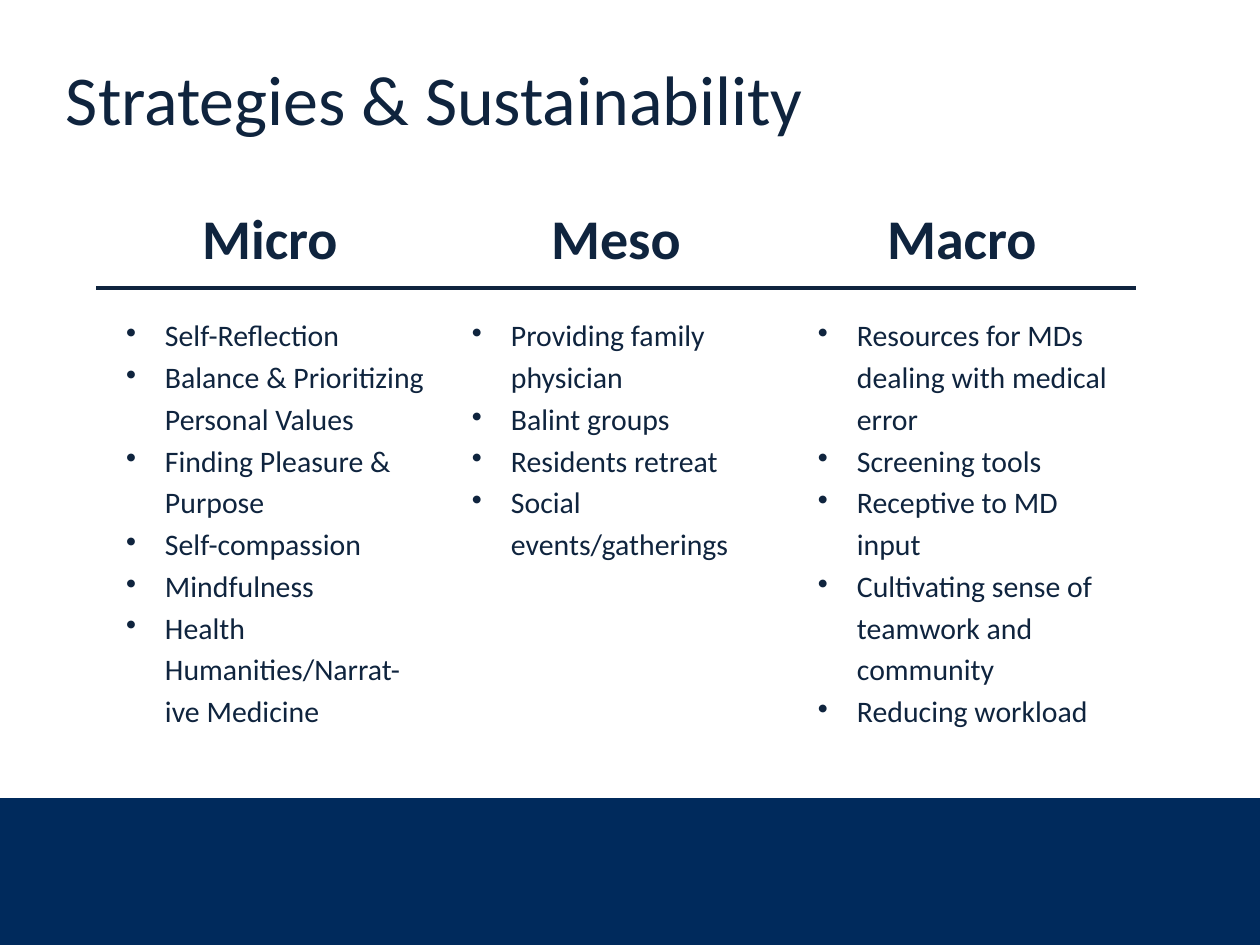
from lxml import etree
from pptx import Presentation
from pptx.dml.color import RGBColor
from pptx.enum.shapes import MSO_SHAPE
from pptx.enum.text import MSO_ANCHOR, PP_ALIGN
from pptx.oxml.ns import qn
from pptx.util import Pt

RECT = MSO_SHAPE.RECTANGLE
TOP, BOTTOM = MSO_ANCHOR.TOP, MSO_ANCHOR.BOTTOM
LEFT, CENTER = PP_ALIGN.LEFT, PP_ALIGN.CENTER

TITLE = "Strategies & Sustainability"
LEVELS = {
    "Micro": [
        "Self-Reflection",
        "Balance & Prioritizing Personal Values",
        "Finding Pleasure & Purpose",
        "Self-compassion",
        "Mindfulness",
        "Health Humanities/Narrat-ive Medicine",
    ],
    "Meso": [
        "Providing family physician",
        "Balint groups",
        "Residents retreat",
        "Social events/gatherings",
    ],
    "Macro": [
        "Resources for MDs dealing with medical error",
        "Screening tools",
        "Receptive to MD input",
        "Cultivating sense of teamwork and community",
        "Reducing workload",
    ],
}
COLORS = {"ink": "0F243E", "band": "002A5C"}
FONT = "Calibri"
WIDE, HIGH, BAND = 1260, 945, 798
COL, ROWS, PAD = 346, (115, 462), 13


def px(n):
    return round(n * 914400 / 126)


def add_bullet(para):
    props = para._p.get_or_add_pPr()
    props.set("marL", str(px(55)))
    props.set("indent", str(px(-39)))
    tint = etree.SubElement(props, qn("a:buClr"))
    etree.SubElement(tint, qn("a:srgbClr"), val=COLORS["ink"])
    etree.SubElement(props, qn("a:buChar"), char="•")


def write(frame, lines, size, bold=False, align=LEFT, bullet=False):
    for i, line in enumerate(lines):
        para = frame.add_paragraph() if i else frame.paragraphs[0]
        if bullet:
            add_bullet(para)
            para.line_spacing = 1.15
        para.alignment = align
        run = para.add_run()
        run.text = line
        run.font.name = FONT
        run.font.size = Pt(size)
        run.font.bold = bold
        run.font.color.rgb = RGBColor.from_string(COLORS["ink"])


def set_pad(box, top=PAD):
    box.margin_left = box.margin_right = box.margin_bottom = px(PAD)
    box.margin_top = px(top)


def add_rule(cell, side):
    line = etree.Element(qn("a:" + side), w=str(Pt(3)))
    fill = etree.SubElement(line, qn("a:solidFill"))
    etree.SubElement(fill, qn("a:srgbClr"), val=COLORS["ink"])
    cell._tc.get_or_add_tcPr().insert(0, line)


def fill_cell(cell, lines, size, side, anchor, top=PAD, **style):
    cell.fill.background()
    cell.vertical_anchor = anchor
    set_pad(cell, top)
    add_rule(cell, side)
    write(cell.text_frame, lines, size, **style)


def main():
    deck = Presentation()
    deck.slide_width, deck.slide_height = px(WIDE), px(HIGH)
    slide = deck.slides.add_slide(deck.slide_layouts[6])
    shapes = slide.shapes

    band = shapes.add_shape(RECT, 0, px(BAND), px(WIDE), px(HIGH - BAND))
    band.shadow.inherit = False
    band.fill.solid()
    band.fill.fore_color.rgb = RGBColor.from_string(COLORS["band"])
    band.line.fill.background()

    title = shapes.add_textbox(px(53), px(71), px(1153), px(81)).text_frame
    title.word_wrap = True
    title.vertical_anchor = BOTTOM
    set_pad(title)
    write(title, [TITLE], 40)

    table = shapes.add_table(len(ROWS), len(LEVELS), px(97), px(173),
                             px(COL * len(LEVELS)), px(sum(ROWS))).table
    table.first_row = table.horz_banding = False
    for row, tall in zip(table.rows, ROWS):
        row.height = px(tall)
    for i, (name, items) in enumerate(LEVELS.items()):
        table.columns[i].width = px(COL)
        fill_cell(table.cell(0, i), [name], 32, "lnB", BOTTOM,
                  bold=True, align=CENTER)
        fill_cell(table.cell(1, i), items, 17, "lnT", TOP,
                  top=25, bullet=True)

    deck.save("out.pptx")


if __name__ == "__main__":
    main()
